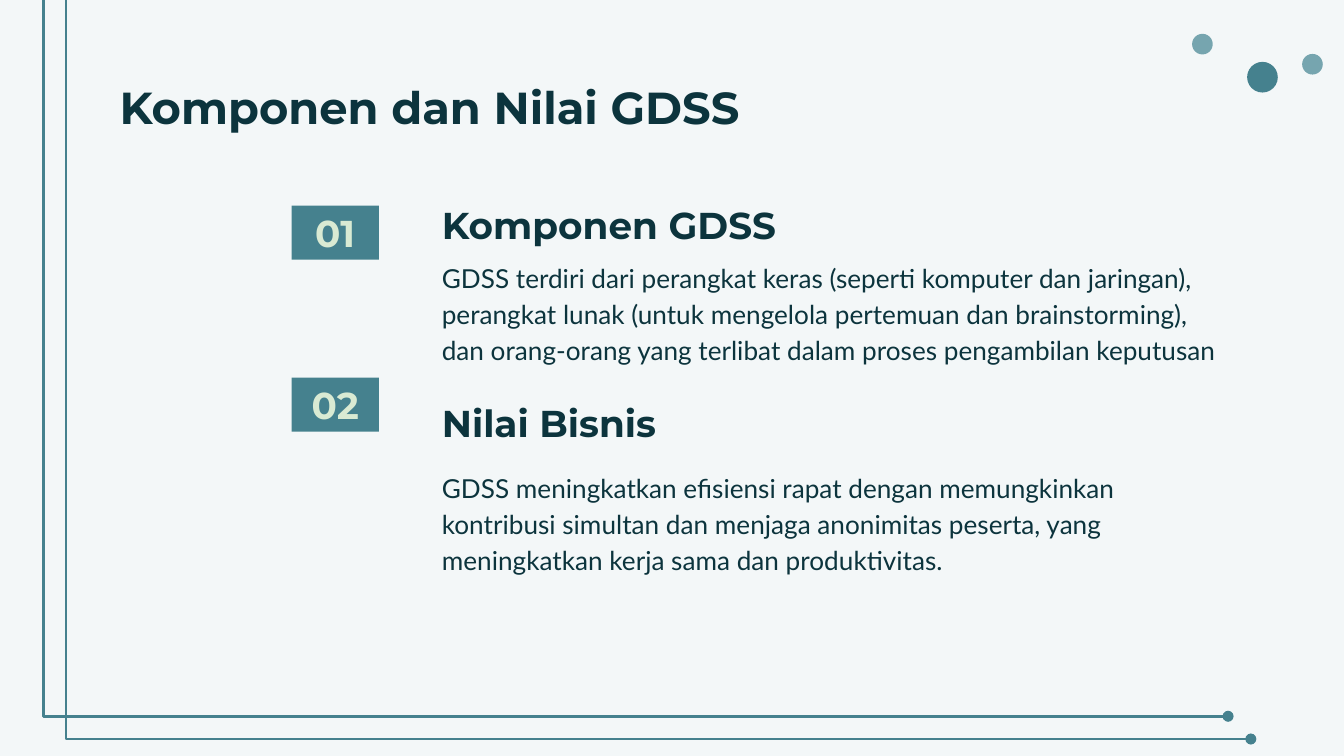
from dataclasses import dataclass

from lxml.etree import SubElement
from pptx import Presentation
from pptx.dml.color import RGBColor
from pptx.enum.shapes import MSO_CONNECTOR, MSO_SHAPE
from pptx.enum.text import MSO_ANCHOR, MSO_AUTO_SIZE, PP_ALIGN
from pptx.oxml.ns import qn
from pptx.util import Cm, Pt


@dataclass(frozen=True)
class Theme:
    back: str = "F3F7F8"
    ink: str = "0C343D"
    teal: str = "45818E"
    pale: str = "76A5AF"
    mint: str = "D9EAD3"
    head: str = "Montserrat"
    body: str = "Lato"
    title: int = 24
    sub: int = 20
    text: int = 14
    line: float = 1.5


THEME = Theme()
ITEMS = [
    # number, heading, text, box (left, top, width), heading drop, text drop
    ("01", "Komponen GDSS",
     "GDSS terdiri dari perangkat keras (seperti komputer dan jaringan), "
     "perangkat lunak (untuk mengelola pertemuan dan brainstorming), "
     "dan orang-orang yang terlibat dalam proses pengambilan keputusan",
     (5.51, 3.89, 18.08), 0, 0.73),
    ("02", "Nilai Bisnis",
     "GDSS meningkatkan efisiensi rapat dengan memungkinkan kontribusi "
     "simultan dan menjaga anonimitas peserta, yang meningkatkan kerja sama "
     "dan produktivitas.",
     (5.51, 7.14, 17.37), 0.51, 1.45),
]


def put(obj, form):
    for key, val in form.items():
        setattr(obj, key, val)


def place(shape, x, y, w, h):
    put(shape, {"left": Cm(x), "top": Cm(y), "width": Cm(w), "height": Cm(h)})


def write(shape, text, font, size, color, bold=True, anchor=MSO_ANCHOR.TOP,
          align=PP_ALIGN.LEFT, space=1.0):
    frame = shape.text_frame
    frame.text = text
    pad = {f"margin_{side}": Cm(0.25) for side in ("left", "right", "top", "bottom")}
    put(frame, {"word_wrap": True, "auto_size": MSO_AUTO_SIZE.NONE,
                "vertical_anchor": anchor, **pad})
    para = frame.paragraphs[0]
    put(para, {"alignment": align, "line_spacing": space, "space_before": Pt(0)})
    put(para.runs[0].font, {"name": font, "size": Pt(size), "bold": bold})
    para.runs[0].font.color.rgb = RGBColor.from_string(color)
    # No bullet and no hanging indent
    props = para._p.get_or_add_pPr()
    props.set("marL", "0")
    props.set("indent", "0")
    SubElement(props, qn("a:buNone"))


def block(slide, kind, color, *box):
    shape = slide.shapes.add_shape(kind, *map(Cm, box))
    shape.shadow.inherit = False
    shape.fill.solid()
    shape.fill.fore_color.rgb = RGBColor.from_string(color)
    shape.line.fill.background()
    return shape


def dots(slide, x, y):
    for dx, dy, size, color in ((1.04, 0.53, 0.58, THEME.teal),
                                (0, 0, 0.39, THEME.pale),
                                (2.08, 0.38, 0.39, THEME.pale)):
        block(slide, MSO_SHAPE.OVAL, color, x + dx, y + dy, size, size)


def frame(slide, x, y, w, h, step):
    # Two elbow lines, the second moved down and right
    for gap in (0, step):
        ends = (x + gap, y + gap, x + w + gap, y + h + gap)
        line = slide.shapes.add_connector(MSO_CONNECTOR.ELBOW, *map(Cm, ends))
        line.line.width = Pt(THEME.line)
        line.line.color.rgb = RGBColor.from_string(THEME.teal)
        props = line._element.spPr
        bend = props.find(qn("a:prstGeom")).find(qn("a:avLst"))
        SubElement(bend, qn("a:gd"), name="adj1", fmla="val -1000")
        SubElement(props.find(qn("a:ln")), qn("a:tailEnd"), type="oval")
        SubElement(props, qn("a:effectLst"))


def item(slide, head, body, data):
    num, name, text, (x, y, w), drop, fall = data
    high, inset = 1.02, 2.59
    # Number badge
    badge = block(slide, MSO_SHAPE.RECTANGLE, THEME.teal, x, y, 1.65, high)
    write(badge, num, THEME.head, THEME.sub, THEME.mint,
          anchor=MSO_ANCHOR.MIDDLE, align=PP_ALIGN.CENTER)
    # Heading and text
    place(head, x + inset, y + drop, 11.79, high)
    write(head, name, THEME.head, THEME.sub, THEME.ink,
          anchor=MSO_ANCHOR.BOTTOM, space=1.15)
    place(body, x + inset, y + fall, w - inset, high)
    write(body, text, THEME.body, THEME.text, THEME.ink, bold=False, space=1.15)


def main():
    deck = Presentation()
    put(deck, {"slide_width": Cm(25.4), "slide_height": Cm(14.29)})
    # Comparison layout: a title and two pairs of heading and text
    slide = deck.slides.add_slide(deck.slide_layouts[4])
    fill = slide.background.fill
    fill.solid()
    fill.fore_color.rgb = RGBColor.from_string(THEME.back)

    dots(slide, 22.53, 0.64)
    frame(slide, 1.04, -0.61, 22.17, 14.15, 0.43)

    title = slide.shapes.title
    place(title, 2.01, 1.25, 22.33, 1.6)
    write(title, "Komponen dan Nilai GDSS", THEME.head, THEME.title, THEME.ink)

    parts = slide.placeholders
    for data, (head, body) in zip(ITEMS, ((1, 2), (3, 4))):
        item(slide, parts[head], parts[body], data)

    deck.save("out.pptx")


if __name__ == "__main__":
    main()
